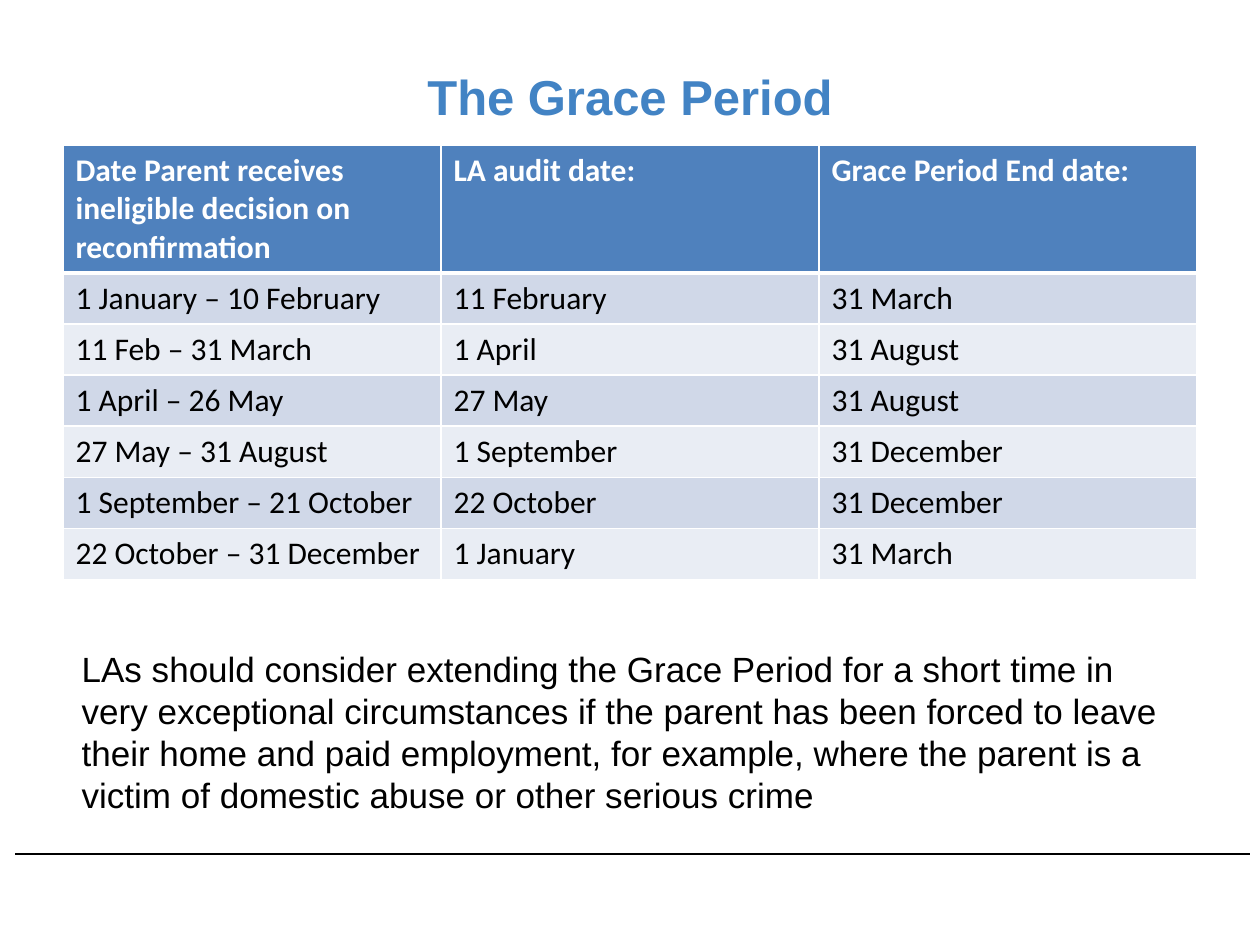
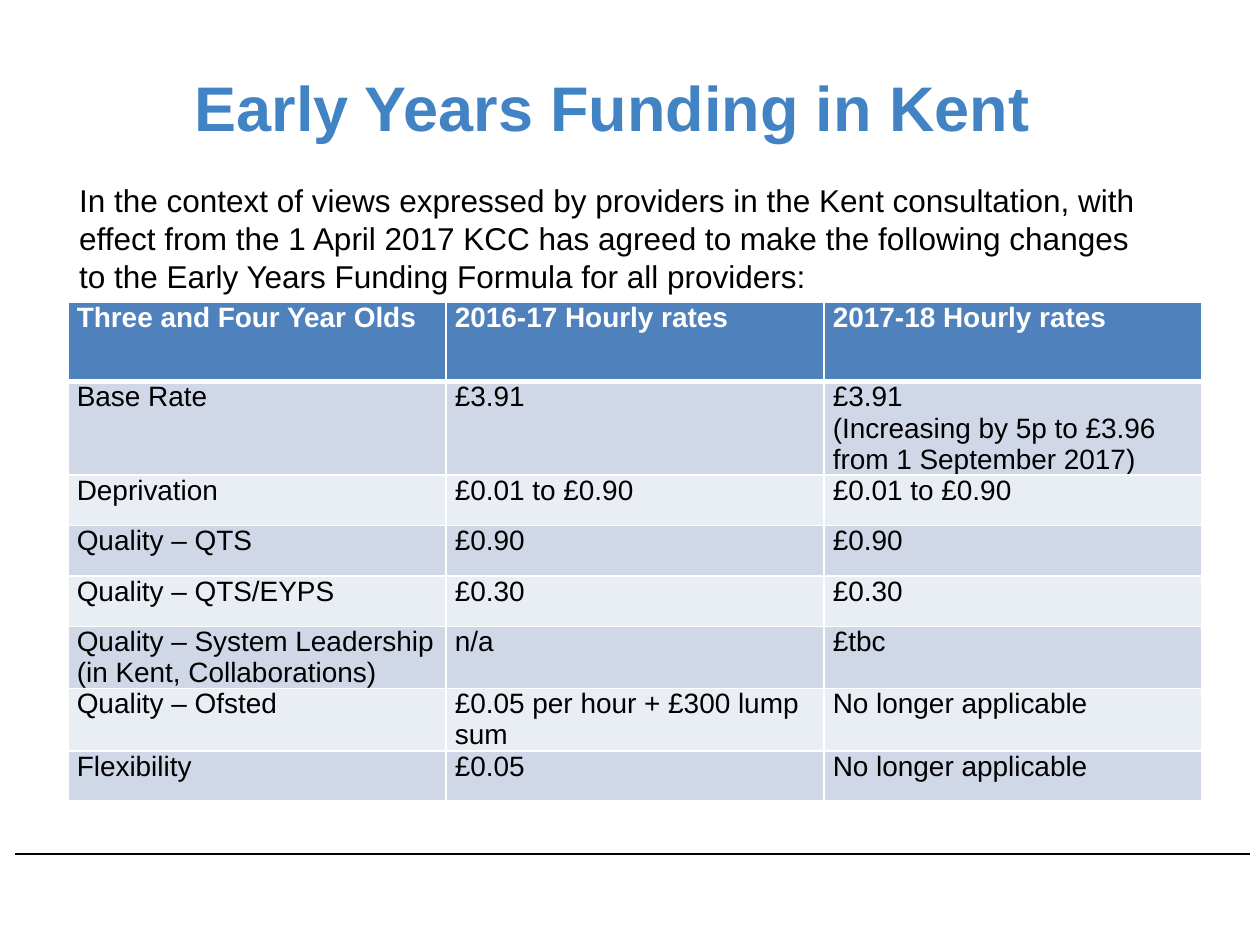
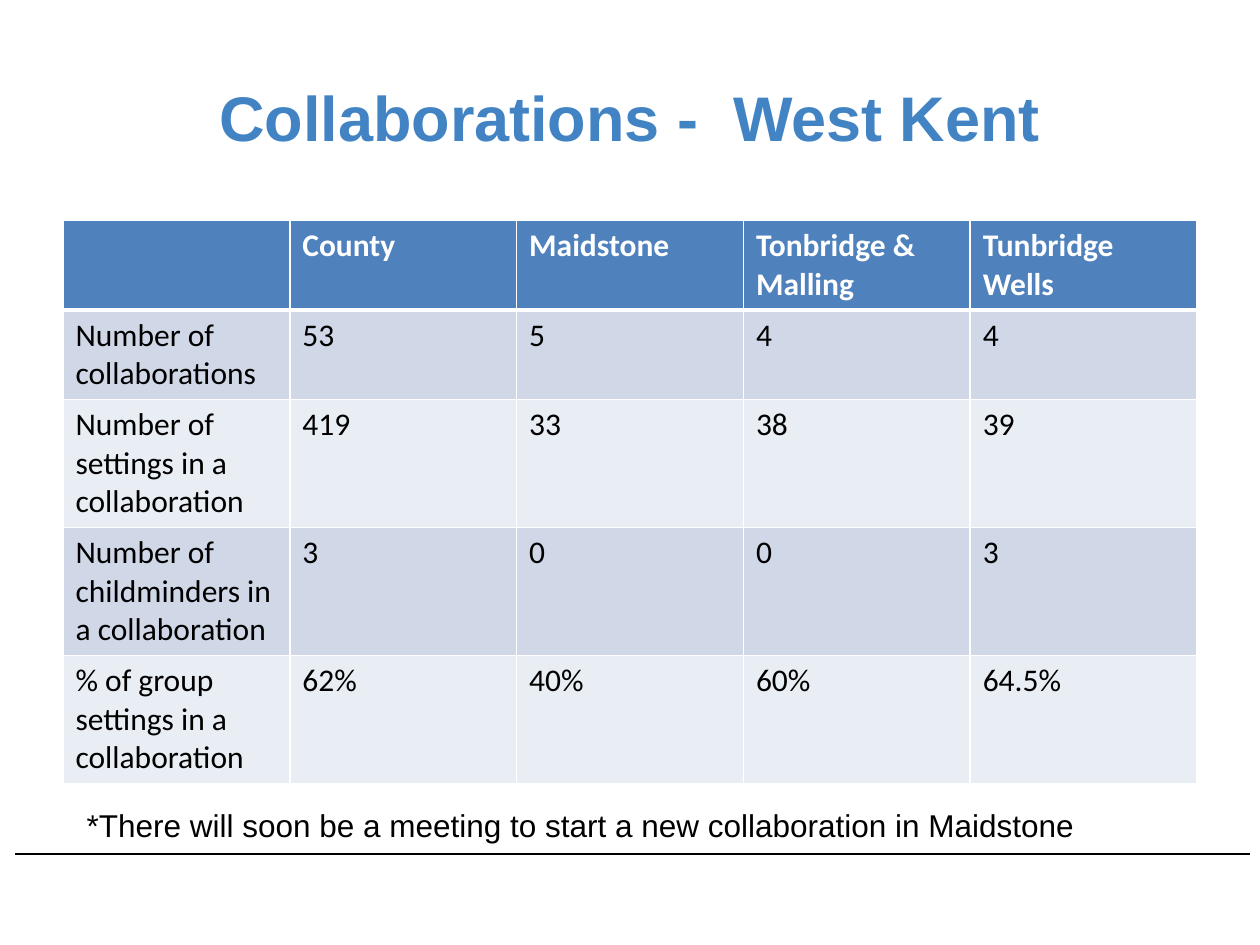
from dataclasses import dataclass

from lxml.etree import SubElement
from pptx import Presentation
from pptx.dml.color import RGBColor as RGB
from pptx.enum.shapes import MSO_CONNECTOR as CONNECTOR
from pptx.enum.text import MSO_ANCHOR as ANCHOR, MSO_AUTO_SIZE as AUTO_SIZE, PP_ALIGN as ALIGN
from pptx.oxml.ns import qn
from pptx.util import Inches, Pt


@dataclass(frozen=True)
class Theme:
    title: RGB = RGB.from_string("4283C4")
    header: RGB = RGB.from_string("4F81BD")
    odd_row: RGB = RGB.from_string("D0D8E8")
    even_row: RGB = RGB.from_string("E9EDF4")
    ink: RGB = RGB.from_string("000000")
    paper: RGB = RGB.from_string("FFFFFF")
    text_font: str = "Arial"
    table_font: str = "Calibri"
    title_size: int = 36
    small_title_size: int = 28
    large_size: int = 20
    body_size: int = 18
    compact_size: int = 16
    thin: int = 1
    thick: int = 3


THEME = Theme()
ROW_HEIGHT = 0.4

GRACE_PERIODS = [
    ["Date Parent receives\nineligible decision on reconfirmation", "LA audit date:",
     "Grace Period End date:"],
    ["1 January – 10 February", "11 February", "31 March"],
    ["11 Feb – 31 March", "1 April", "31 August"],
    ["1 April – 26 May", "27 May", "31 August"],
    ["27 May – 31 August", "1 September", "31 December"],
    ["1 September – 21 October", "22 October", "31 December"],
    ["22 October – 31 December", "1 January", "31 March"],
]
HOURLY_RATES = [
    ["Three and Four Year Olds", "2016-17 Hourly rates", "2017-18 Hourly rates"],
    ["Base Rate", "£3.91", "£3.91\n(Increasing by 5p to £3.96 from 1 September 2017)"],
    ["Deprivation", "£0.01 to £0.90", "£0.01 to £0.90"],
    ["Quality – QTS", "£0.90", "£0.90"],
    ["Quality – QTS/EYPS", "£0.30", "£0.30"],
    ["Quality – System Leadership (in Kent, Collaborations)", "n/a", "£tbc"],
    ["Quality – Ofsted", "£0.05 per hour + £300 lump sum", "No longer applicable"],
    ["Flexibility", "£0.05", "No longer applicable"],
]
COLLABORATIONS = [
    ["", "County", "Maidstone", "Tonbridge & Malling", "Tunbridge Wells"],
    ["Number of collaborations", "53", "5", "4", "4"],
    ["Number of settings in a collaboration", "419", "33", "38", "39"],
    ["Number of childminders in a collaboration", "3", "0", "0", "3"],
    ["% of group settings in a collaboration", "62%", "40%", "60%", "64.5%"],
]


def format_text(frame, font, size, color, bold=False, align=None):
    for paragraph in frame.paragraphs:
        paragraph.alignment = align
        for run in paragraph.runs:
            run.font.name = font
            run.font.size = Pt(size)
            run.font.bold = bold
            run.font.color.rgb = color


def place(shape, left, top, width, height):
    shape.left, shape.top = Inches(left), Inches(top)
    shape.width, shape.height = Inches(width), Inches(height)


def add_footer_rule(slide):
    rule = slide.shapes.add_connector(
        CONNECTOR.STRAIGHT, Inches(0.12), Inches(6.78), Inches(9.92), Inches(6.78))
    rule.line.color.rgb = THEME.ink
    rule.line.width = Pt(THEME.thin)
    SubElement(rule._element.spPr, qn("a:effectLst"))


def add_titled_slide(deck, title, height, width=9, size=THEME.title_size):
    slide = deck.slides.add_slide(deck.slide_layouts[5])
    add_footer_rule(slide)
    heading = slide.shapes.title
    place(heading, 0.5, 0.3, width, height)
    frame = heading.text_frame
    frame.text = title
    frame.vertical_anchor = ANCHOR.MIDDLE
    frame.auto_size = AUTO_SIZE.NONE
    format_text(frame, THEME.text_font, size, THEME.title, True, ALIGN.CENTER)
    return slide


def add_note(slide, text, box, size=THEME.body_size):
    frame = slide.shapes.add_textbox(*map(Inches, box)).text_frame
    frame.word_wrap = True
    frame.auto_size = AUTO_SIZE.SHAPE_TO_FIT_TEXT
    frame.text = text
    format_text(frame, THEME.text_font, size, THEME.ink)


def set_borders(cell, top, bottom):
    """Draw white borders; they must precede the cell's fill in the XML."""
    properties = cell._tc.get_or_add_tcPr()
    widths = {"lnL": THEME.thin, "lnR": THEME.thin, "lnT": top, "lnB": bottom}
    for side, width in widths.items():
        border = SubElement(properties, qn(f"a:{side}"), w=str(Pt(width)))
        fill = SubElement(border, qn("a:solidFill"))
        SubElement(fill, qn("a:srgbClr"), val=str(THEME.paper))


def add_banded_table(slide, rows, left, top, header_height, compact=False):
    """Add a 9-inch table; compact uses smaller text and tight margins."""
    table = slide.shapes.add_table(
        len(rows), len(rows[0]), Inches(left), Inches(top), Inches(9),
        Inches(header_height + ROW_HEIGHT * (len(rows) - 1))).table
    font = THEME.text_font if compact else THEME.table_font
    size = THEME.compact_size if compact else THEME.body_size
    for row_index, texts in enumerate(rows):
        is_header = row_index == 0
        table.rows[row_index].height = Inches(header_height if is_header else ROW_HEIGHT)
        band = THEME.odd_row if row_index % 2 else THEME.even_row
        for column, text in enumerate(texts):
            cell = table.cell(row_index, column)
            set_borders(cell,
                        top=THEME.thick if row_index == 1 else THEME.thin,
                        bottom=THEME.thick if is_header else THEME.thin)
            cell.fill.solid()
            cell.fill.fore_color.rgb = THEME.header if is_header else band
            if compact:
                cell.margin_left = cell.margin_right = Inches(0.07)
                cell.margin_top = cell.margin_bottom = 0
            cell.text_frame.text = text
            format_text(cell.text_frame, font, size,
                        THEME.paper if is_header else THEME.ink, is_header)


def build_grace_period(deck):
    slide = add_titled_slide(deck, "The Grace Period", 0.93, size=THEME.small_title_size)
    add_banded_table(slide, GRACE_PERIODS, 0.5, 1.15, 1)
    add_note(slide, "LAs should consider extending the Grace Period for a short time in very "
             "exceptional circumstances if the parent has been forced to leave their home and "
             "paid employment, for example, where the parent is a victim of domestic abuse or "
             "other serious crime", (0.55, 5.09, 8.9, 1.45), THEME.large_size)


def build_funding(deck):
    slide = add_titled_slide(deck, "Early Years Funding in Kent", 1.09, width=8.72)
    add_banded_table(slide, HOURLY_RATES, 0.54, 2.4, 0.63, compact=True)
    add_note(slide, "In the context of views expressed by providers in the Kent consultation, "
             "with effect from the 1 April 2017 KCC has agreed to make the following changes to "
             "the Early Years Funding Formula for all providers:", (0.53, 1.39, 8.74, 1.01))


def build_collaborations(deck):
    slide = add_titled_slide(deck, "Collaborations -  West Kent", 1.25)
    add_banded_table(slide, COLLABORATIONS, 0.5, 1.75, 0.7)
    add_note(slide, "*There will soon be a meeting to start a new collaboration in Maidstone",
             (0.59, 6.35, 8.9, 0.4))


def main():
    deck = Presentation()
    deck.slide_width, deck.slide_height = Inches(10), Inches(7.5)
    build_grace_period(deck)
    build_funding(deck)
    build_collaborations(deck)
    deck.save("out.pptx")


if __name__ == "__main__":
    main()
